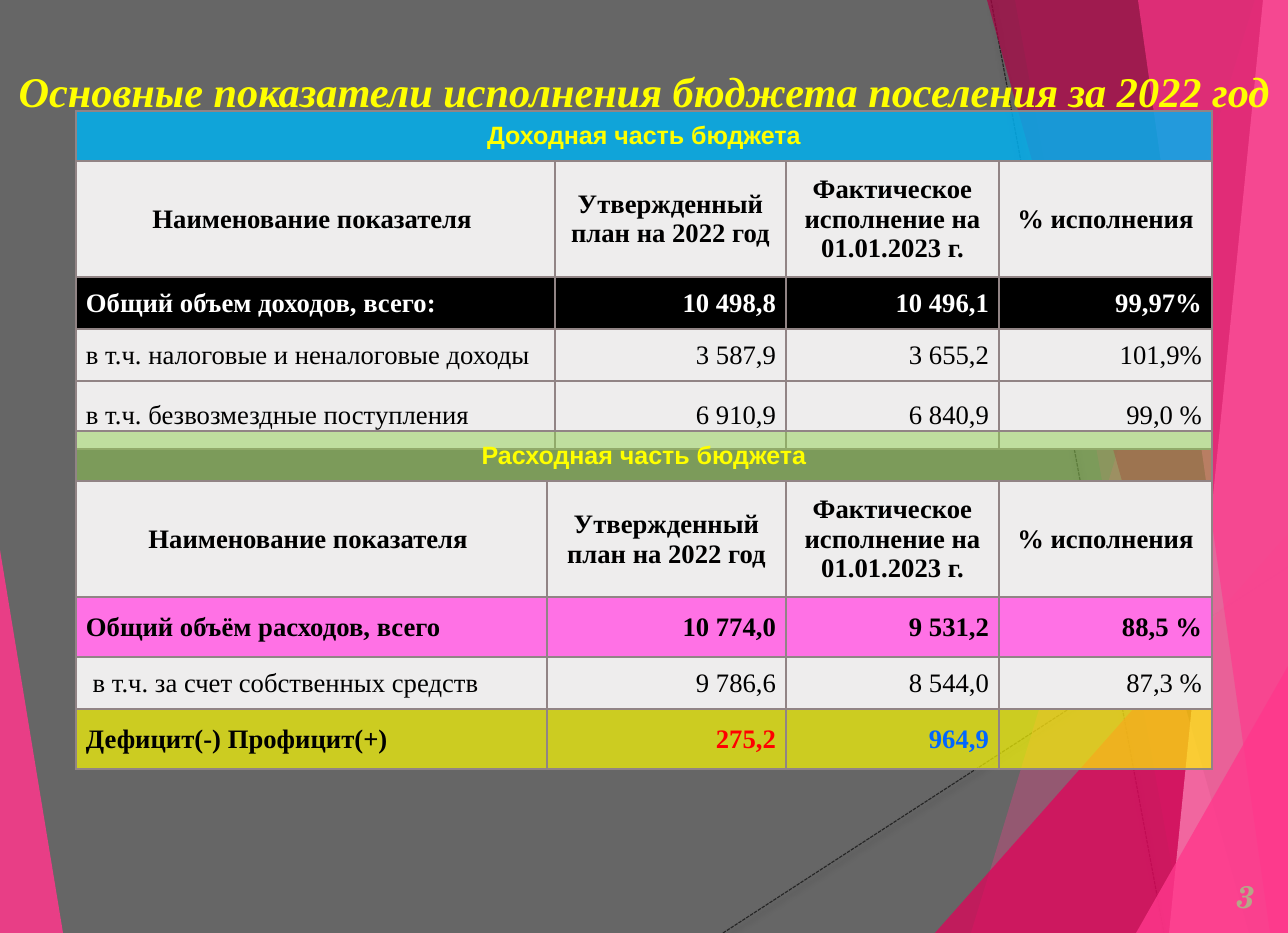
from dataclasses import dataclass

from lxml import etree
from pptx import Presentation
from pptx import util as u
from pptx.dml import color, fill as dml_fill
from pptx.enum import shapes, text
from pptx.oxml import ns, parse_xml
from pptx.slide import Slide
from pptx.text import text as txt

PX = 8106  # EMU in one px
WIDTH, HEIGHT = 1288, 933


@dataclass(frozen=True)
class Paint:
    rgb: str
    opacity: int = 100


@dataclass(frozen=True)
class Font:
    name: str
    size: int
    bold: bool = True
    italic: bool = False


@dataclass(frozen=True)
class Theme:
    background: Paint = Paint("666666")
    ray: str = "262626"
    border: str = "918485"
    black: str = "000000"
    white: str = "FFFFFF"
    yellow: str = "FFFF00"
    deficit: str = "FF0000"
    surplus: str = "0066FF"
    page: str = "B5A788"
    plain: Paint = Paint("EEEDED")
    income: Paint = Paint("00B0F0", 84)
    expense: Paint = Paint("92D050", 50)
    income_total: Paint = Paint("000000")
    expense_total: Paint = Paint("FF71E5")
    balance: Paint = Paint("FFFF00", 67)
    title_font: Font = Font("Times New Roman", 27, italic=True)
    section_font: Font = Font("Arial", 16)
    strong_font: Font = Font("Times New Roman", 17)
    body_font: Font = Font("Times New Roman", 17, bold=False)
    page_font: Font = Font("TeX Gyre Schola", 20, italic=True)


THEME = Theme()


@dataclass(frozen=True)
class Facet:
    points: tuple[tuple[int, int], ...]
    paint: Paint


@dataclass(frozen=True)
class Row:
    height: int
    cells: tuple[str, ...]
    paint: Paint = THEME.plain
    font: Font = THEME.body_font
    inks: tuple[str, ...] = (THEME.black,) * 4


@dataclass(frozen=True)
class BudgetPart:
    top: int
    columns: tuple[int, ...]
    heading: str
    paint: Paint
    rows: tuple[Row, ...]


TABLE_LEFT = 76
SECTION_HEIGHT = 47
HEADER = Row(116, ("Наименование показателя ", "Утвержденный план на 2022 год",
                   "Фактическое исполнение на 01.01.2023 г.", "% исполнения"),
             font=THEME.strong_font)

RAYS = (((723, HEIGHT), (WIDTH, 567)), ((991, 0), (1164, HEIGHT)))


def right_facet(top: int, bottom: int, paint: Paint) -> Facet:
    """Full-height facet between a slanted edge and the right side of the slide."""
    return Facet(((top, 0), (bottom, HEIGHT), (WIDTH, HEIGHT), (WIDTH, 0)), paint)


def corner_facet(left: int, top: int, paint: Paint) -> Facet:
    return Facet(((left, HEIGHT), (WIDTH, top), (WIDTH, HEIGHT)), paint)


FACETS = (
    Facet(((0, 550), (63, HEIGHT), (0, HEIGHT)), Paint("FF388C", 85)),
    right_facet(1255, 971, Paint("FF388C", 30)),
    right_facet(1015, 1184, Paint("FF388C", 20)),
    corner_facet(935, 534, Paint("E40059", 72)),
    right_facet(987, 1249, Paint("AB0043", 70)),
    right_facet(1263, 1169, Paint("FF88BA", 70)),
    right_facet(1138, 1270, Paint("FF388C", 65)),
    corner_facet(1136, 666, Paint("FF388C", 80)),
)

INCOME = BudgetPart(111, (479, 231, 213, 213), "Доходная часть бюджета", THEME.income, (
    HEADER,
    Row(51, ("Общий объем доходов, всего:", "10 498,8", "10 496,1", "99,97%"),
        THEME.income_total, THEME.strong_font, (THEME.white,) * 4),
    Row(52, ("в т.ч. налоговые и неналоговые доходы", "3 587,9", "3 655,2", "101,9%")),
    Row(68, ("в т.ч. безвозмездные поступления", "6 910,9", "6 840,9", "99,0 %")),
))
EXPENSE = BudgetPart(431, (471, 239, 213, 213), "Расходная часть бюджета", THEME.expense, (
    HEADER,
    Row(60, ("Общий объём расходов, всего", "10 774,0", "9 531,2", "88,5 %"),
        THEME.expense_total, THEME.strong_font),
    Row(52, (" в т.ч. за счет собственных средств", "9 786,6", "8 544,0", "87,3 %")),
    Row(60, ("Дефицит(-) Профицит(+)", "275,2", "964,9", ""), THEME.balance,
        THEME.strong_font, (THEME.black, THEME.deficit, THEME.surplus, THEME.black)),
))


def apply_paint(fill: dml_fill.FillFormat, properties: etree.ElementBase, paint: Paint) -> None:
    fill.solid()
    fill.fore_color.rgb = color.RGBColor.from_string(paint.rgb)
    if paint.opacity < 100:
        rgb = properties.find(ns.qn("a:solidFill"))[0]
        etree.SubElement(rgb, ns.qn("a:alpha"), val=str(paint.opacity * 1000))


def write(paragraph: txt._Paragraph, words: str, font: Font, ink: str,
          align: text.PP_ALIGN) -> None:
    paragraph.alignment = align
    run = paragraph.add_run()
    run.text = words
    run.font.name, run.font.size = font.name, u.Pt(font.size)
    run.font.bold, run.font.italic = font.bold, font.italic
    run.font.color.rgb = color.RGBColor.from_string(ink)


def draw_ray(slide: Slide, start: tuple[int, int], end: tuple[int, int]) -> None:
    ray = slide.shapes.add_connector(shapes.MSO_CONNECTOR.STRAIGHT,
                                     *(n * PX for n in start + end))
    ray.line.color.rgb = color.RGBColor.from_string(THEME.ray)
    ray.line.width = u.Pt(0.75)
    etree.SubElement(ray.line._get_or_add_ln(), ns.qn("a:prstDash"), val="sysDash")
    ray._element.spPr.append(parse_xml(
        f'<a:effectLst {ns.nsdecls("a")}><a:outerShdw blurRad="50800" dist="25400" '
        'dir="5400000"><a:srgbClr val="000000"><a:alpha val="35000"/></a:srgbClr>'
        '</a:outerShdw></a:effectLst>'))


def draw_facet(slide: Slide, facet: Facet) -> None:
    builder = slide.shapes.build_freeform(*facet.points[0], scale=PX)
    builder.add_line_segments(facet.points[1:], close=True)
    shape = builder.convert_to_shape()
    apply_paint(shape.fill, shape._element.spPr, facet.paint)
    shape.line.fill.background()
    shape.shadow.inherit = False


def draw_label(slide: Slide, box: tuple[int, int, int, int], words: str, font: Font,
               ink: str, align: text.PP_ALIGN) -> None:
    frame = slide.shapes.add_textbox(*(n * PX for n in box)).text_frame
    frame.word_wrap = True
    frame.vertical_anchor = text.MSO_ANCHOR.MIDDLE
    write(frame.paragraphs[0], words, font, ink, align)


def draw_budget(slide: Slide, part: BudgetPart) -> None:
    section = Row(SECTION_HEIGHT, (part.heading, "", "", ""), part.paint,
                  THEME.section_font, (THEME.yellow,) * 4)
    rows = (section, *part.rows)
    table = slide.shapes.add_table(
        len(rows), len(part.columns), TABLE_LEFT * PX, part.top * PX,
        sum(part.columns) * PX, sum(row.height for row in rows) * PX).table
    table.first_row = table.horz_banding = False
    for column, width in zip(table.columns, part.columns):
        column.width = width * PX
    for r, row in enumerate(rows):
        table.rows[r].height = row.height * PX
        for c, (words, ink) in enumerate(zip(row.cells, row.inks)):
            cell = table.cell(r, c)
            cell.margin_left = cell.margin_right = 10 * PX
            cell.margin_top = cell.margin_bottom = 10 * PX
            cell.vertical_anchor = text.MSO_ANCHOR.MIDDLE
            properties = cell._tc.get_or_add_tcPr()
            for side in "LRTB":
                properties.append(parse_xml(
                    f'<a:ln{side} {ns.nsdecls("a")} w="12700"><a:solidFill>'
                    f'<a:srgbClr val="{THEME.border}"/></a:solidFill></a:ln{side}>'))
            apply_paint(cell.fill, properties, row.paint)
            if words:
                align = (text.PP_ALIGN.CENTER if row in (section, HEADER)
                         else text.PP_ALIGN.RIGHT if c else text.PP_ALIGN.LEFT)
                write(cell.text_frame.paragraphs[0], words, row.font, ink, align)
    table.cell(0, 0).merge(table.cell(0, len(part.columns) - 1))


def main() -> None:
    deck = Presentation()
    deck.slide_width, deck.slide_height = WIDTH * PX, HEIGHT * PX
    slide = deck.slides.add_slide(deck.slide_layouts[6])
    backdrop = slide.background.fill
    backdrop.solid()
    backdrop.fore_color.rgb = color.RGBColor.from_string(THEME.background.rgb)
    for start, end in RAYS:
        draw_ray(slide, start, end)
    for facet in FACETS:
        draw_facet(slide, facet)
    draw_label(slide, (1202, 871, 64, 50), "3", THEME.page_font, THEME.page,
               text.PP_ALIGN.RIGHT)
    draw_label(slide, (0, 66, WIDTH, 50), "Основные показатели исполнения бюджета поселения за 2022 год",
               THEME.title_font, THEME.yellow, text.PP_ALIGN.CENTER)
    for part in (INCOME, EXPENSE):
        draw_budget(slide, part)
    deck.save("out.pptx")


if __name__ == "__main__":
    main()
